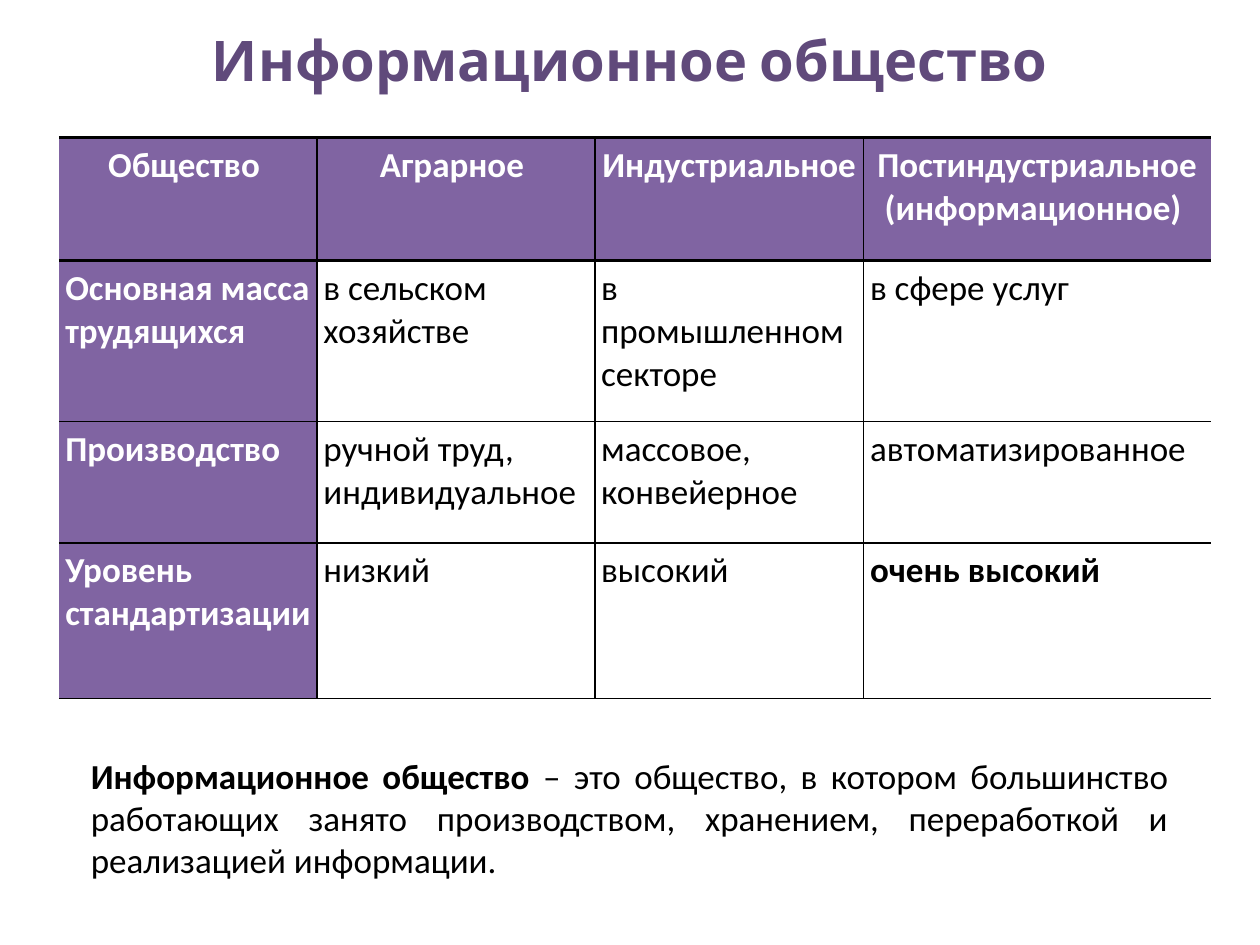
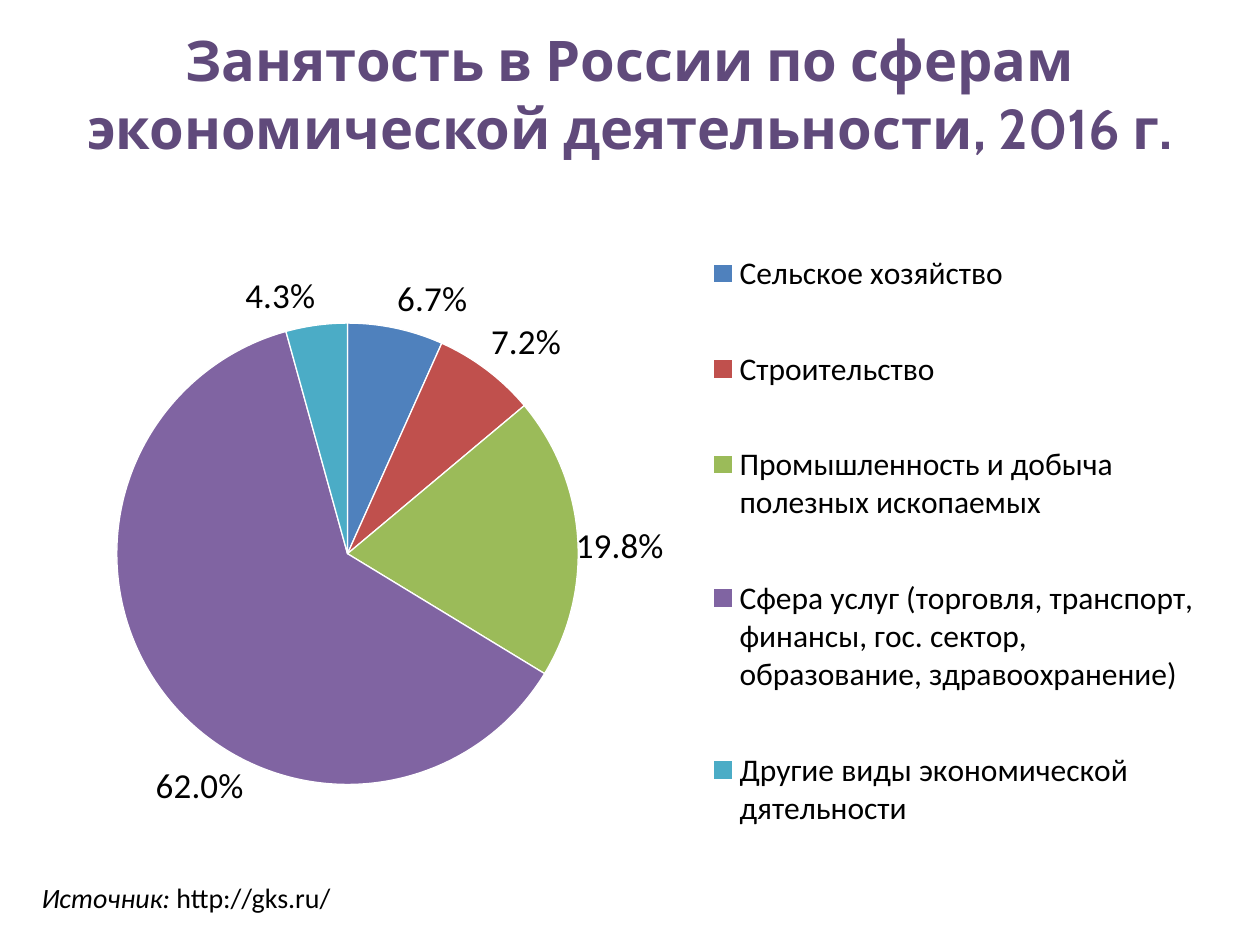
from copy import deepcopy
from dataclasses import dataclass
from typing import Any

from lxml import etree
from pptx import Presentation
from pptx import util as u
from pptx.chart import data
from pptx.dml.color import RGBColor
from pptx.enum import chart as ch
from pptx.enum import text as tx
from pptx.oxml import ns

Pt = u.Pt


@dataclass(frozen=True)
class Theme:
    title: str = "604A7B"
    head: str = "8064A2"
    ink: str = "000000"
    paper: str = "FFFFFF"
    slices: tuple[str, ...] = ("4F81BD", "C0504D", "9BBB59", "8064A2", "4BACC6")
    brand: str = "Cabin"
    body: str = "Calibri"
    big: int = 32
    mid: int = 20
    key: int = 18
    small: int = 16


@dataclass(frozen=True)
class Box:
    left: float
    top: float
    width: float
    height: float

    def place(self) -> tuple[u.Length, ...]:
        return Pt(self.left), Pt(self.top), Pt(self.width), Pt(self.height)


@dataclass(frozen=True)
class Run:
    text: str
    bold: bool = False
    italic: bool = False


T = Theme()
TITLE = Box(36, 11.2, 648, 84)
QUOTE = Box(44.8, 427.5, 630, 80)
SOURCE = Box(16.7, 499.5, 670, 27)
GRID = Box(33.7, 78.7, 658.1, 320.4)
PIE = Box(33.7, 106.5, 658.3, 405)

COLS = (147.5, 158.7, 153.7, 198.2)
ROWS = (70.3, 92, 69.2, 88.9)
TABLE = (
    ("Общество ", "Аграрное ", "Индустриальное ", "Постиндустриальное (информационное) "),
    ("Основная масса трудящихся", "в сельском хозяйстве", "в промышленном секторе", "в сфере услуг"),
    ("Производство", "ручной труд, индивидуальное", "массовое, конвейерное", "автоматизированное"),
    ("Уровень стандартизации", "низкий", "высокий", "очень высокий"),
)
STRONG = "очень высокий"
JOBS = {
    "Сельское хозяйство": 6.7,
    "Строительство": 7.2,
    "Промышленность и добыча полезных ископаемых": 19.8,
    "Сфера услуг (торговля, транспорт, финансы, гос. сектор, образование, здравоохранение)": 62,
    "Другие виды экономической дятельности": 4.3,
}
SHIFTS = {2: {"x": -0.8, "y": 1.4}, 3: {"x": 7.5, "y": 9.4}}
PLOT = {"x": 5, "y": 19.3, "w": 40.1, "h": 65.1}
LEGEND = {"x": 56.6, "y": 1.5, "w": 42.5, "h": 97}


def apply(item: Any, form: dict[str, Any]) -> None:
    for name, value in form.items():
        setattr(item, name, value)


def style(font: Any, color: str, **form: Any) -> None:
    apply(font, form)
    font.color.rgb = RGBColor.from_string(color)


def add_text(slide: Any, box: Box, runs: list[Run], size: int, align: Any,
             face: str = T.body, color: str = T.ink) -> None:
    frame = slide.shapes.add_textbox(*box.place()).text_frame
    apply(frame, {"word_wrap": True, "vertical_anchor": tx.MSO_ANCHOR.TOP})
    para = frame.paragraphs[0]
    para.alignment = align
    for part in runs:
        run = para.add_run()
        run.text = part.text
        style(run.font, color, name=face, size=Pt(size), bold=part.bold, italic=part.italic)


def add_title(slide: Any, words: str) -> None:
    add_text(slide, TITLE, [Run(words, bold=True)], T.big, tx.PP_ALIGN.CENTER, T.brand, T.title)


def edge(cell: Any, sides: dict[str, float]) -> None:
    props = cell._tc.get_or_add_tcPr()
    for spot, (side, width) in enumerate(sides.items()):
        line = etree.Element(ns.qn(f"a:ln{side}"), w=str(Pt(width)))
        if width:
            fill = etree.SubElement(line, ns.qn("a:solidFill"))
            etree.SubElement(fill, ns.qn("a:srgbClr"), val=T.ink)
        else:
            etree.SubElement(line, ns.qn("a:noFill"))
        props.insert(spot, line)


def add_grid(slide: Any) -> None:
    grid = slide.shapes.add_table(len(ROWS), len(COLS), *GRID.place()).table
    for col, width in zip(grid.columns, COLS):
        col.width = Pt(width)
    for row, height in zip(grid.rows, ROWS):
        row.height = Pt(height)
    pads = dict.fromkeys(("margin_left", "margin_top", "margin_right", "margin_bottom"), Pt(3.6))
    for r, line in enumerate(TABLE):
        for c, words in enumerate(line):
            cell = grid.cell(r, c)
            head = r == 0 or c == 0
            apply(cell, {"text": words, **pads})
            cell.fill.solid()
            cell.fill.fore_color.rgb = RGBColor.from_string(T.head if head else T.paper)
            para = cell.text_frame.paragraphs[0]
            para.alignment = tx.PP_ALIGN.LEFT if r else tx.PP_ALIGN.CENTER
            style(para.runs[0].font, T.paper if head else T.ink, name=T.body,
                  size=Pt(T.mid), bold=head or words == STRONG)
            edge(cell, {
                "L": 1 if c else 0,
                "R": 1 if c < len(COLS) - 1 else 0,
                "T": 1 if r > 1 else 2,
                "B": 1 if r else 2,
            })


def layout(host: Any, spot: int, shares: dict[str, float], **modes: str) -> None:
    for old in host.findall(ns.qn("c:layout")):
        host.remove(old)
    node = etree.Element(ns.qn("c:layout"))
    hand = etree.SubElement(node, ns.qn("c:manualLayout"))
    values = {**modes, **{name: share / 100 for name, share in shares.items()}}
    for name, value in values.items():
        etree.SubElement(hand, ns.qn(f"c:{name}"), val=str(value))
    host.insert(spot, node)


def shift(labels: Any, point: int, shares: dict[str, float]) -> None:
    label = etree.Element(ns.qn("c:dLbl"))
    etree.SubElement(label, ns.qn("c:idx"), val=str(point))
    skip = (ns.qn("c:dLbl"), ns.qn("c:showLeaderLines"))
    label.extend([deepcopy(part) for part in labels if part.tag not in skip])
    layout(label, 1, shares)
    labels.insert(len(labels.findall(ns.qn("c:dLbl"))), label)


def add_pie(slide: Any) -> None:
    facts = data.CategoryChartData()
    facts.categories = list(JOBS)
    facts.add_series("Занятость", list(JOBS.values()))
    chart = slide.shapes.add_chart(ch.XL_CHART_TYPE.PIE, *PIE.place(), facts).chart
    apply(chart, {"has_title": False, "has_legend": True})
    style(chart.font, T.ink, name=T.body, size=Pt(T.key))
    apply(chart.legend, {"position": ch.XL_LEGEND_POSITION.RIGHT, "include_in_layout": False})
    style(chart.legend.font, T.ink, name=T.body, size=Pt(T.key))

    plot = chart.plots[0]
    plot.vary_by_categories = True
    series = plot.series[0]
    for spot, color in enumerate(T.slices):
        form = series.points[spot].format
        form.fill.solid()
        form.fill.fore_color.rgb = RGBColor.from_string(color)
        form.line.color.rgb = RGBColor.from_string(T.paper)
        form.line.width = Pt(0.75)
    labels = series.data_labels
    apply(labels, {
        "show_percentage": True,
        "show_value": False,
        "number_format": "0.0%",
        "number_format_is_linked": False,
        "position": ch.XL_LABEL_POSITION.OUTSIDE_END,
    })
    style(labels.font, T.ink, name=T.body, size=Pt(T.mid))

    root = chart._chartSpace
    node = root.xpath(".//c:ser/c:dLbls")[0]
    node.xpath("./c:txPr/a:bodyPr")[0].set("wrap", "none")
    for old in node.findall(ns.qn("c:showLeaderLines")):
        node.remove(old)
    etree.SubElement(node, ns.qn("c:showLeaderLines"), val="0")
    for point, shares in SHIFTS.items():
        shift(node, point, shares)
    layout(root.xpath(".//c:plotArea")[0], 0, PLOT,
           layoutTarget="inner", xMode="edge", yMode="edge")
    layout(root.xpath(".//c:legend")[0], 1, LEGEND, xMode="edge", yMode="edge")


def main() -> None:
    deck = Presentation()
    apply(deck, {"slide_width": Pt(720), "slide_height": Pt(540)})
    blank = deck.slide_layouts[6]

    slide = deck.slides.add_slide(blank)
    add_title(slide, "Информационное общество")
    add_grid(slide)
    add_text(slide, QUOTE, [
        Run("Информационное общество", bold=True),
        Run(" – это общество, в котором большинство работающих занято производством, "
            "хранением, переработкой и реализацией информации."),
    ], T.mid, tx.PP_ALIGN.JUSTIFY)

    slide = deck.slides.add_slide(blank)
    add_title(slide, "Занятость в России по сферам экономической деятельности, 2016 г.")
    add_pie(slide)
    add_text(slide, SOURCE, [Run("Источник: ", italic=True), Run("http://gks.ru/")],
             T.small, tx.PP_ALIGN.LEFT)
    deck.save("out.pptx")


if __name__ == "__main__":
    main()
